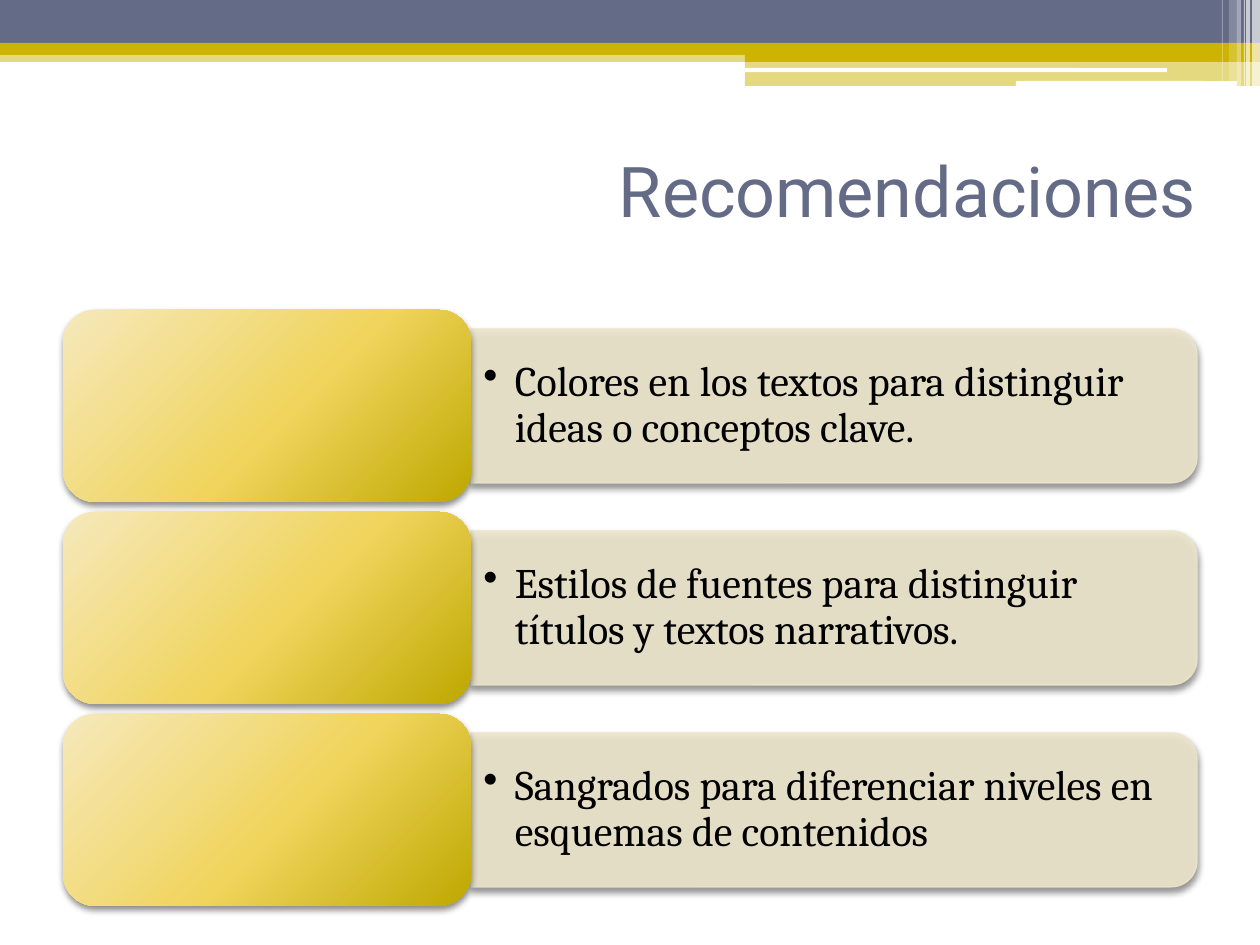
"""Build the "Recomendaciones" slide: a banded header and three tile-and-bar rows."""
from copy import deepcopy
from typing import NamedTuple

from lxml.etree import SubElement
from pptx import Presentation
from pptx.dml.color import RGBColor
from pptx.enum.shapes import MSO_SHAPE
from pptx.enum.text import MSO_ANCHOR, MSO_AUTO_SIZE, PP_ALIGN
from pptx.oxml.ns import qn
from pptx.util import Emu, Inches, Pt

SCALE = Inches(1) / 126
SLATE = RGBColor(0x64, 0x6B, 0x86)
GOLD = RGBColor(0xCC, 0xB4, 0x00)
CREAM = RGBColor(0xEC, 0xE5, 0xCC)
WHITE = RGBColor(0xFF, 0xFF, 0xFF)
BLACK = RGBColor(0x00, 0x00, 0x00)
TILE_STOPS = [
    (0, RGBColor(0xF6, 0xE9, 0xBC)),
    (0.55, RGBColor(0xF0, 0xD4, 0x5C)),
    (1, RGBColor(0xBE, 0xA8, 0x00)),
]


class Box(NamedTuple):
    left: int
    top: int
    width: int
    height: int


class Band(NamedTuple):
    box: Box
    color: RGBColor
    opacity: int = 100
    kind: MSO_SHAPE = MSO_SHAPE.RECTANGLE


BANDS = [
    Band(Box(0, 50, 1260, 12), GOLD, 50),
    Band(Box(0, 0, 1260, 43), SLATE),
    Band(Box(0, 43, 1260, 12), GOLD),
    Band(Box(745, 49, 515, 13), GOLD),
    Band(Box(745, 61, 515, 25), GOLD, 50),
    Band(Box(745, 68, 422, 4), WHITE, kind=MSO_SHAPE.ROUNDED_RECTANGLE),
    Band(Box(1016, 81, 221, 5), WHITE, kind=MSO_SHAPE.ROUNDED_RECTANGLE),
    Band(Box(1252, 0, 8, 86), WHITE, 65),
    Band(Box(1246, 0, 4, 86), WHITE, 65),
    Band(Box(1244, 0, 1, 86), WHITE, 60),
    Band(Box(1237, 0, 4, 86), WHITE, 40),
    Band(Box(1229, 0, 8, 81), WHITE, 20),
    Band(Box(1222, 0, 1, 81), WHITE, 30),
]
RECOMMENDATIONS = [
    "Colores en los textos para distinguir ideas o conceptos clave.",
    "Estilos de fuentes para distinguir títulos y textos narrativos.",
    "Sangrados para diferenciar niveles en esquemas de contenidos",
]
FIRST_ROW_TOP, ROW_PITCH = 310, 202
TILE_LEFT, TILE_WIDTH, TILE_HEIGHT = 63, 408, 192
BAR_LEFT, BAR_LENGTH, BAR_DEPTH = 471, 726, 154


def px(length: float) -> Emu:
    return Emu(round(length * SCALE))


def emu(box: Box) -> list[Emu]:
    return [px(length) for length in box]


def set_opacity(parent, percent: int) -> None:
    for color in parent.iter(qn("a:srgbClr")):
        SubElement(color, qn("a:alpha"), val=str(percent * 1000))


def add_band(shapes, band: Band):
    shape = shapes.add_shape(band.kind, *emu(band.box))
    shape.shadow.inherit = False
    shape.fill.solid()
    shape.fill.fore_color.rgb = band.color
    shape.line.fill.background()
    if band.opacity < 100:
        set_opacity(shape.element.spPr, band.opacity)
    return shape


def add_shadow(shape) -> None:
    effects = shape.element.spPr.find(qn("a:effectLst"))
    shadow = SubElement(effects, qn("a:outerShdw"), blurRad=str(Pt(4)),
                        dist=str(Pt(2)), dir="5400000", rotWithShape="0")
    SubElement(shadow, qn("a:srgbClr"), val=str(BLACK))
    set_opacity(shadow, 45)


def add_bar(shapes, center: int) -> None:
    box = Box(BAR_LEFT + (BAR_LENGTH - BAR_DEPTH) // 2, center - BAR_LENGTH // 2,
              BAR_DEPTH, BAR_LENGTH)
    bar = add_band(shapes, Band(box, CREAM, kind=MSO_SHAPE.ROUND_2_SAME_RECTANGLE))
    bar.rotation = 90
    bar.line.color.rgb = CREAM
    bar.line.width = Pt(0.75)
    set_opacity(bar.element.spPr, 90)
    add_shadow(bar)


def add_recommendation(shapes, text: str, center: int) -> None:
    height = 138
    frame = shapes.add_textbox(*emu(Box(BAR_LEFT, center - height // 2, 718, height))).text_frame
    frame.word_wrap = True
    frame.vertical_anchor = MSO_ANCHOR.MIDDLE
    frame.text = text
    paragraph = frame.paragraphs[0]
    paragraph.line_spacing = 0.9
    paragraph.space_after = Pt(3.6)
    font = paragraph.runs[0].font
    font.name, font.size, font.color.rgb = "Cambria", Pt(24), BLACK
    properties = paragraph.runs[0].font and paragraph._p.get_or_add_pPr()
    properties.set("marL", str(Inches(0.25)))
    properties.set("indent", str(-Inches(0.25)))
    SubElement(properties, qn("a:buChar"), char="•")


def add_tile(shapes, top: int) -> None:
    box = Box(TILE_LEFT, top, TILE_WIDTH, TILE_HEIGHT)
    tile = add_band(shapes, Band(box, GOLD, kind=MSO_SHAPE.ROUNDED_RECTANGLE))
    tile.fill.gradient()
    tile.fill.gradient_angle = 315
    stop_list = tile.element.spPr.find(qn("a:gradFill")).find(qn("a:gsLst"))
    stop_list.append(deepcopy(stop_list[0]))
    for stop, (position, color) in zip(tile.fill.gradient_stops, TILE_STOPS):
        stop.position = position
        stop.color.rgb = color
    add_shadow(tile)


def set_title(title) -> None:
    title.left, title.top, title.width, title.height = emu(Box(74, 116, 1134, 147))
    frame = title.text_frame
    frame.text = "Recomendaciones"
    frame.auto_size = MSO_AUTO_SIZE.NONE
    frame.vertical_anchor = MSO_ANCHOR.MIDDLE
    paragraph = frame.paragraphs[0]
    paragraph.alignment = PP_ALIGN.RIGHT
    font = paragraph.runs[0].font
    font.name, font.size, font.color.rgb = "Roboto", Pt(40), SLATE


def main() -> None:
    deck = Presentation()
    deck.slide_width, deck.slide_height = px(1260), px(945)
    shapes = deck.slides.add_slide(deck.slide_layouts[5]).shapes
    set_title(shapes.title)
    for band in BANDS:
        add_band(shapes, band)
    for row, text in enumerate(RECOMMENDATIONS):
        top = FIRST_ROW_TOP + row * ROW_PITCH
        center = top + TILE_HEIGHT // 2
        add_bar(shapes, center)
        add_recommendation(shapes, text, center)
        add_tile(shapes, top)
    deck.save("out.pptx")


if __name__ == "__main__":
    main()
